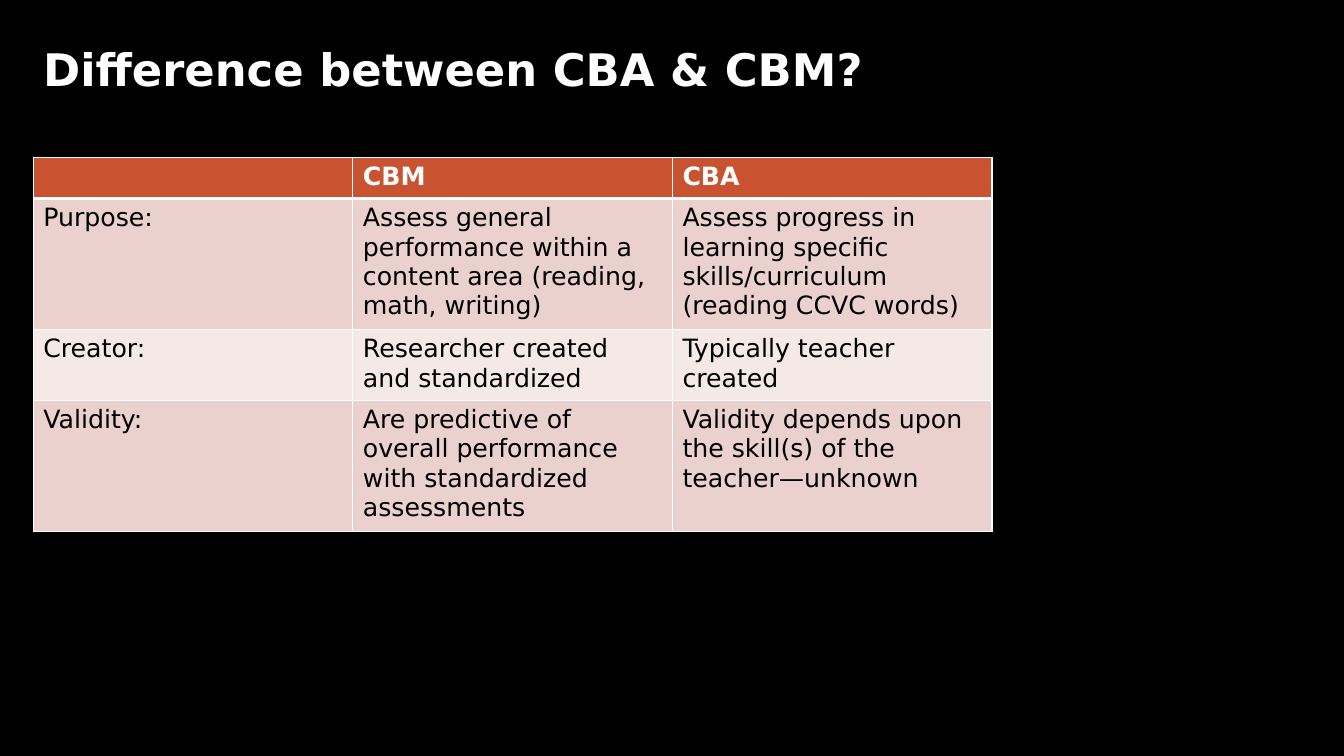
from lxml.etree import SubElement
from pptx import Presentation
from pptx.dml.color import RGBColor
from pptx.enum.text import MSO_ANCHOR
from pptx.oxml.ns import qn
from pptx.util import Inches, Pt

TITLE = "Difference between CBA & CBM?"
ROWS = [
    ("", "CBM", "CBA"),
    ("Purpose:",
     "Assess general performance within a content area (reading, math, writing)",
     "Assess progress in learning specific skills/curriculum (reading CCVC words)"),
    ("Creator:", "Researcher created and standardized", "Typically teacher created"),
    ("Validity:",
     "Are predictive of overall performance with standardized assessments",
     "Validity depends upon the skill(s) of the teacher—unknown"),
]
ROW_HEIGHTS = [0.41, 1.26, 0.68, 1.26]
COLUMN_WIDTH = 3.17
LEFT, TITLE_TOP, TABLE_TOP = 0.33, 0.25, 1.56
FONT = "DejaVu Sans"
BLACK, WHITE = "000000", "FFFFFF"
HEADER, BANDS = "C95331", ("F5E9E8", "EBD1CE")


def rgb(value):
    return RGBColor.from_string(value)


def style(paragraph, size, color, bold):
    font = paragraph.font
    for f in [font] + [r.font for r in paragraph.runs]:
        f.name, f.size, f.bold = FONT, Pt(size), bold
        f.color.rgb = rgb(color)


def set_borders(cell, widths):
    """Draw white borders; widths maps L, R, T and B to points."""
    tcPr = cell._tc.get_or_add_tcPr()
    for side, width in widths.items():
        ln = SubElement(tcPr, qn(f"a:ln{side}"), w=str(Pt(width)))
        fill = SubElement(ln, qn("a:solidFill"))
        SubElement(fill, qn("a:srgbClr"), val=WHITE)


def add_title(slide):
    box = slide.shapes.add_textbox(Inches(LEFT), Inches(TITLE_TOP), Inches(12.67), Inches(0.8))
    tf = box.text_frame
    tf.word_wrap = True
    tf.vertical_anchor = MSO_ANCHOR.MIDDLE
    tf.text = TITLE
    p = tf.paragraphs[0]
    p.line_spacing = 1.1
    style(p, 32, WHITE, True)


def add_comparison(slide):
    n_rows, n_cols = len(ROWS), len(ROWS[0])
    table = slide.shapes.add_table(
        n_rows, n_cols, Inches(LEFT), Inches(TABLE_TOP),
        Inches(COLUMN_WIDTH * n_cols), Inches(sum(ROW_HEIGHTS))).table
    for column in table.columns:
        column.width = Inches(COLUMN_WIDTH)
    for i, (texts, height) in enumerate(zip(ROWS, ROW_HEIGHTS)):
        table.rows[i].height = Inches(height)
        header = i == 0
        for j, text in enumerate(texts):
            cell = table.cell(i, j)
            set_borders(cell, {"L": 1, "R": 1, "T": 3 if i == 1 else 1, "B": 3 if header else 1})
            cell.fill.solid()
            cell.fill.fore_color.rgb = rgb(HEADER if header else BANDS[i % 2])
            cell.text_frame.text = text
            style(cell.text_frame.paragraphs[0], 18, WHITE if header else BLACK, header)


def main():
    prs = Presentation()
    prs.slide_width, prs.slide_height = Inches(13.33), Inches(7.5)
    slide = prs.slides.add_slide(prs.slide_layouts[6])
    slide.background.fill.solid()
    slide.background.fill.fore_color.rgb = rgb(BLACK)
    add_title(slide)
    add_comparison(slide)
    prs.save("out.pptx")


if __name__ == "__main__":
    main()
